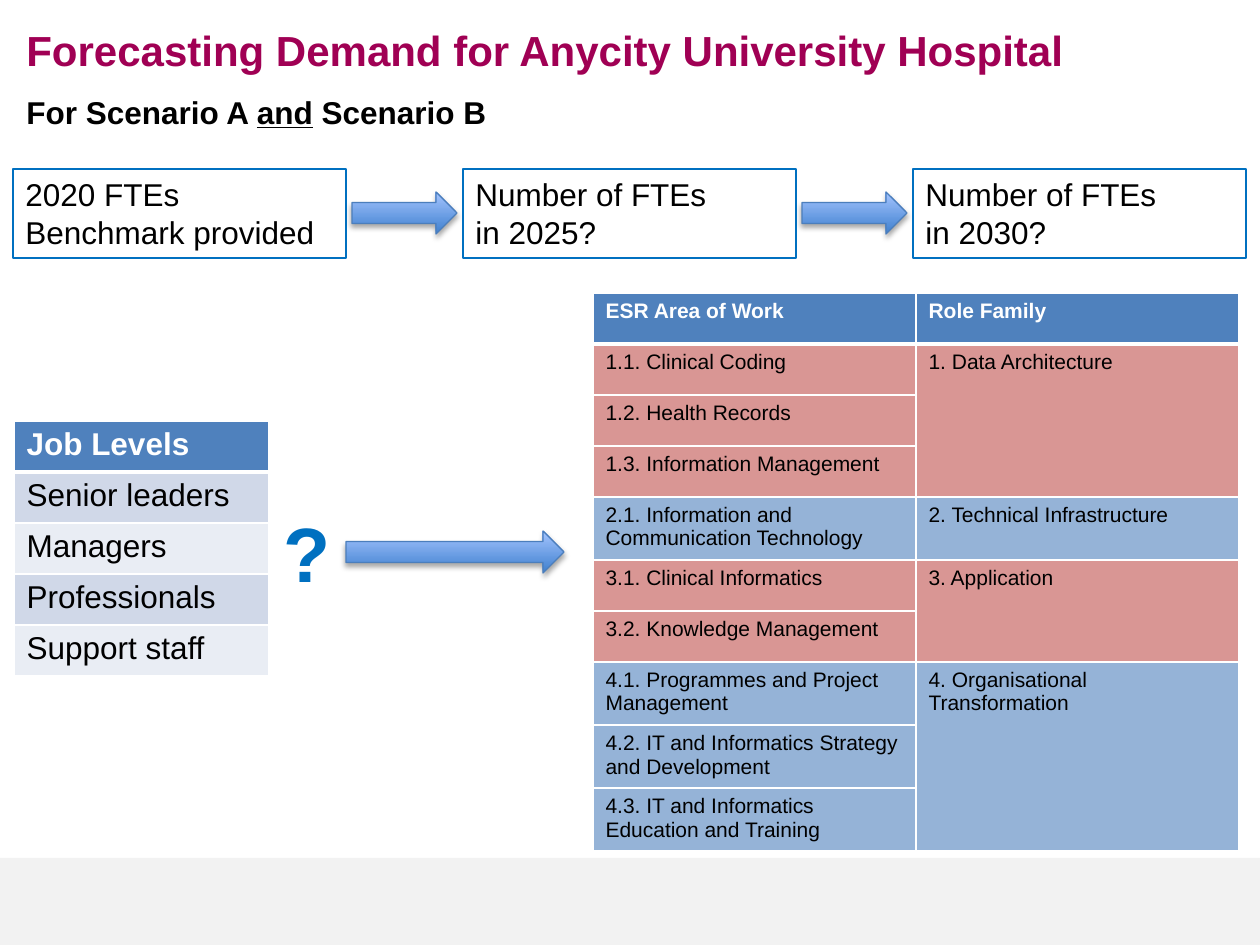
"""Build the slide on forecasting staff demand for a hospital."""
from lxml.etree import SubElement
from pptx import Presentation
from pptx.dml.color import RGBColor
from pptx.enum.shapes import MSO_SHAPE
from pptx.enum.text import MSO_ANCHOR, PP_ALIGN
from pptx.oxml import parse_xml
from pptx.oxml.ns import nsdecls, qn
from pptx.util import Pt

PX = 914400 / 126
BLACK = RGBColor(0x00, 0x00, 0x00)
WHITE = RGBColor(0xFF, 0xFF, 0xFF)
GREY = RGBColor(0xF2, 0xF2, 0xF2)
PLUM = RGBColor(0xA0, 0x00, 0x54)
BLUE = RGBColor(0x00, 0x70, 0xC0)
HEADER = RGBColor(0x4F, 0x81, 0xBD)
BAND_DARK = RGBColor(0xD0, 0xD8, 0xE8)
BAND_LIGHT = RGBColor(0xE9, 0xED, 0xF4)
PINK = RGBColor(0xD9, 0x96, 0x94)
SKY = RGBColor(0x95, 0xB3, 0xD7)
ARROW_DARK = RGBColor(0x3F, 0x80, 0xCE)
ARROW_LIGHT = RGBColor(0xA4, 0xC4, 0xFF)
ARROW_LINE = RGBColor(0x4B, 0x7E, 0xBC)

SHADOW = (
    f'<a:effectLst {nsdecls("a")}><a:outerShdw blurRad="39370" dist="22860" dir="5400000" '
    'rotWithShape="0"><a:srgbClr val="000000"><a:alpha val="35000"/></a:srgbClr>'
    '</a:outerShdw></a:effectLst>'
)


def px(*values):
    return [round(v * PX) for v in values]


def write(p, text, size, color, bold=False, underline=None):
    r = p.add_run()
    r.text = text
    r.font.name = "Arial"
    r.font.size = Pt(size)
    r.font.bold = bold
    r.font.underline = underline
    r.font.color.rgb = color


prs = Presentation()
prs.slide_width, prs.slide_height = px(1260, 945)
s = prs.slides.add_slide(prs.slide_layouts[6])

band = s.shapes.add_shape(MSO_SHAPE.RECTANGLE, *px(0, 858, 1260, 87))
band.shadow.inherit = False
band.fill.solid()
band.fill.fore_color.rgb = GREY
band.line.fill.background()

headings = [
    ((14, 14, 1072, 71), PP_ALIGN.LEFT, 24, PLUM,
     [("Forecasting Demand for Anycity University Hospital", None)]),
    ((14, 86, 762, 51), PP_ALIGN.LEFT, 18, BLACK,
     [("For Scenario A ", None), ("and", True), (" Scenario B", None)]),
    ((268, 499, 78, 106), PP_ALIGN.CENTER, 44, BLUE, [("?", None)]),
]
for place, align, size, color, runs in headings:
    tf = s.shapes.add_textbox(*px(*place)).text_frame
    tf.word_wrap = True
    tf.vertical_anchor = MSO_ANCHOR.MIDDLE
    p = tf.paragraphs[0]
    p.alignment = align
    for text, underline in runs:
        write(p, text, size, color, True, underline)

steps = [
    ("2020 FTEs", "Benchmark provided"),
    ("Number of FTEs", "in 2025?"),
    ("Number of FTEs", "in 2030?"),
]
for i, lines in enumerate(steps):
    box = s.shapes.add_shape(MSO_SHAPE.RECTANGLE, *px(13 + 450 * i, 169, 333, 89))
    box.shadow.inherit = False
    box.fill.background()
    box.line.color.rgb = BLUE
    box.line.width = Pt(0.75)
    tf = box.text_frame
    tf.word_wrap = True
    tf.vertical_anchor = MSO_ANCHOR.TOP
    for j, line in enumerate(lines):
        p = tf.add_paragraph() if j else tf.paragraphs[0]
        p.alignment = PP_ALIGN.LEFT
        write(p, line, 18, BLACK)

for x, y, width in [(352, 192, 105), (802, 192, 105), (346, 531, 218)]:
    arrow = s.shapes.add_shape(MSO_SHAPE.RIGHT_ARROW, *px(x, y, width, 42))
    arrow.fill.gradient()
    arrow.fill.gradient_angle = 90
    for stop, color in zip(arrow.fill.gradient_stops, (ARROW_DARK, ARROW_LIGHT)):
        stop.color.rgb = color
    arrow.line.color.rgb = ARROW_LINE
    arrow.line.width = Pt(0.75)
    arrow._element.spPr.append(parse_xml(SHADOW))

levels = ["Senior leaders", "Managers", "Professionals", "Support staff"]
level_rows = [(["Job Levels"], HEADER)]
for i, level in enumerate(levels):
    level_rows.append(([level], BAND_LIGHT if i % 2 else BAND_DARK))

families = [
    ("1. Data Architecture",
     ["1.1. Clinical Coding", "1.2. Health Records", "1.3. Information Management"]),
    ("2. Technical Infrastructure",
     ["2.1. Information and Communication Technology"]),
    ("3. Application",
     ["3.1. Clinical Informatics", "3.2. Knowledge Management"]),
    ("4. Organisational Transformation",
     ["4.1. Programmes and Project Management",
      "4.2. IT and Informatics Strategy and Development",
      "4.3. IT and Informatics Education and Training"]),
]
area_rows = [(["ESR Area of Work", "Role Family"], HEADER)]
merges = []
for i, (family, areas) in enumerate(families):
    merges.append((len(area_rows), len(area_rows) + len(areas) - 1))
    for j, area in enumerate(areas):
        area_rows.append(([area, "" if j else family], SKY if i % 2 else PINK))

tables = [(14, 421, 255, 18, level_rows, []), (593, 293, 323, 12, area_rows, merges)]
for x, y, width, size, rows, spans in tables:
    n = len(rows[0][0])
    table = s.shapes.add_table(len(rows), n, *px(x, y, width * n, 51 * len(rows))).table
    for column in table.columns:
        column.width = px(width)[0]
    for i, (texts, fill) in enumerate(rows):
        table.rows[i].height = px(51)[0]
        for j, text in enumerate(texts):
            cell = table.cell(i, j)
            tcPr = cell._tc.get_or_add_tcPr()
            for side in "LRTB":
                thick = (i, side) in [(0, "B"), (1, "T")]
                ln = SubElement(tcPr, qn(f"a:ln{side}"), w=str(Pt(3 if thick else 1)))
                SubElement(SubElement(ln, qn("a:solidFill")), qn("a:srgbClr"), val=str(WHITE))
            cell.fill.solid()
            cell.fill.fore_color.rgb = fill
            if text:
                write(cell.text_frame.paragraphs[0], text, size, BLACK if i else WHITE, i == 0)
    for first, last in spans:
        if last > first:
            table.cell(first, 1).merge(table.cell(last, 1))

prs.save("out.pptx")
